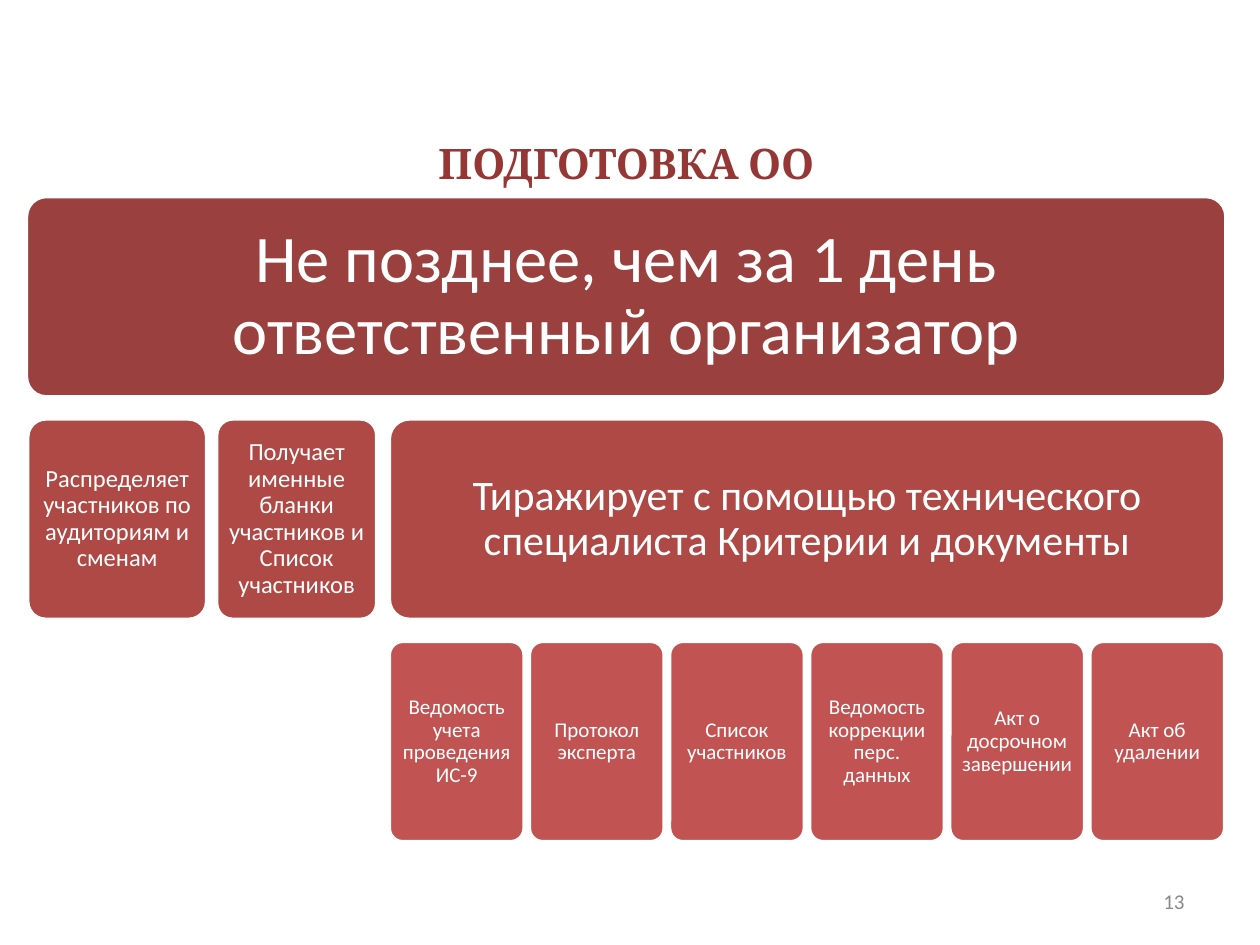
from pptx import Presentation
from pptx.dml.color import RGBColor
from pptx.enum.shapes import MSO_SHAPE
from pptx.enum.text import MSO_ANCHOR, PP_ALIGN
from pptx.util import Inches, Pt


def color(code):
    return RGBColor.from_string(code)


def write(shape, text, size, code="FFFFFF", font="Calibri", bold=False,
          align=PP_ALIGN.CENTER, inset=None, space=None):
    frame = shape.text_frame
    frame.word_wrap = True
    frame.vertical_anchor = MSO_ANCHOR.MIDDLE
    if inset is not None:
        frame.margin_left = frame.margin_right = Inches(inset)
        frame.margin_top = frame.margin_bottom = Inches(inset)
    para = frame.paragraphs[0]
    para.alignment = align
    para.line_spacing = space
    run = para.add_run()
    run.text = text
    run.font.size = Pt(size)
    run.font.name = font
    run.font.bold = bold
    run.font.color.rgb = color(code)


prs = Presentation()
prs.slide_width, prs.slide_height = Inches(10), Inches(7.5)
slide = prs.slides.add_slide(prs.slide_layouts[5])

title = slide.shapes.title
title.left, title.top = Inches(0.47), Inches(1.02)
title.width, title.height = Inches(9), Inches(0.55)
write(title, "ПОДГОТОВКА ОО", 24, code="953735", font="Cambria", bold=True)

page = slide.shapes.add_textbox(Inches(7.17), Inches(6.95), Inches(2.33), Inches(0.4))
write(page, "13", 12, code="898989", align=PP_ALIGN.RIGHT)

# Each box: level, left, width, font size, inset, text
boxes = [
    (0, 0.21, 9.52, 38, 0.16, "Не позднее, чем за 1 день ответственный организатор"),
    (1, 0.22, 1.42, 14, 0.06, "Распределяет участников по аудиториям и сменам"),
    (1, 1.72, 1.27, 14, 0.06, "Получает именные бланки участников и Список участников"),
    (1, 3.09, 6.63, 24, 0.1,
     "Тиражирует с помощью технического специалиста Критерии и документы"),
]
papers = [
    "Ведомость учета проведения ИС-9",
    "Протокол эксперта",
    "Список участников",
    "Ведомость коррекции перс. данных",
    "Акт о досрочном завершении",
    "Акт об удалении",
]
for i, text in enumerate(papers):
    boxes.append((2, 3.09 + i * 1.112, 1.07, 12, 0.05, text))

fills = ["9A403E", "AE4946", "C15452"]
for level, left, width, size, inset, text in boxes:
    top = 1.56 + level * 1.765
    box = slide.shapes.add_shape(MSO_SHAPE.ROUNDED_RECTANGLE, Inches(left),
                                 Inches(top), Inches(width), Inches(1.59))
    box.adjustments[0] = 0.1
    box.shadow.inherit = False
    box.fill.solid()
    box.fill.fore_color.rgb = color(fills[level])
    box.line.color.rgb = color("FFFFFF")
    box.line.width = Pt(2)
    write(box, text, size, inset=inset, space=0.9)

prs.save("out.pptx")
